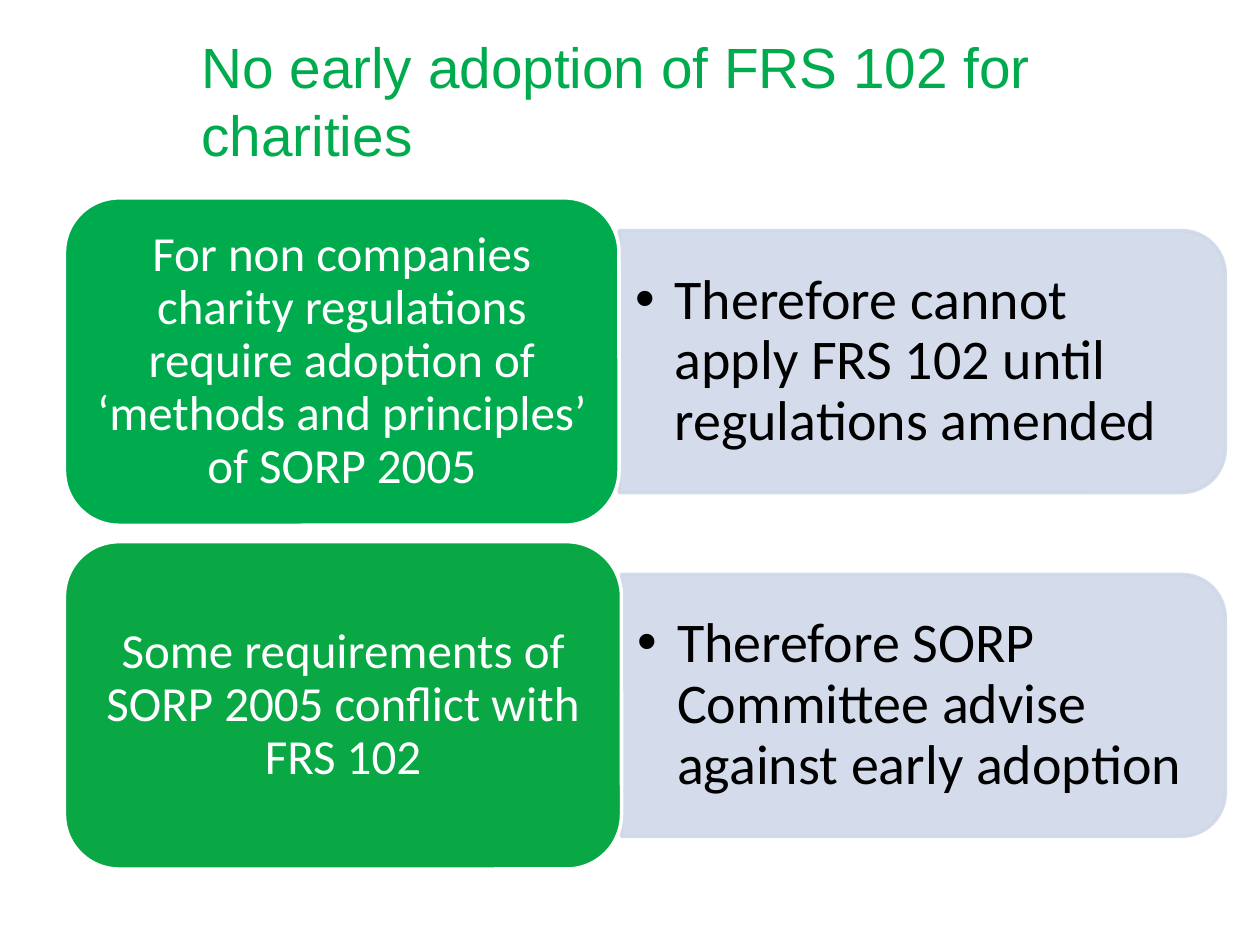
from lxml.etree import SubElement
from pptx import Presentation
from pptx.dml.color import RGBColor
from pptx.enum.shapes import MSO_SHAPE
from pptx.enum.text import MSO_ANCHOR, PP_ALIGN
from pptx.oxml.ns import qn
from pptx.util import Cm, Pt

GREEN = RGBColor(0x00, 0xAB, 0x4E)
DEEP_GREEN = RGBColor(0x0A, 0xA7, 0x45)
PALE_BLUE = RGBColor(0xD0, 0xD8, 0xE8)
WHITE = RGBColor(0xFF, 0xFF, 0xFF)
BLACK = RGBColor(0x00, 0x00, 0x00)

# Content: reason, consequence, card colour, card width in cm
TITLE = "No early adoption of FRS 102 for charities"
ROWS = [
    ("For non companies charity regulations require adoption of "
     "‘methods and principles’ of SORP 2005",
     "Therefore cannot apply FRS 102 until regulations amended", GREEN, 11.18),
    ("Some requirements of SORP 2005 conflict with FRS 102",
     "Therefore SORP Committee advise against early adoption", DEEP_GREEN, 11.23),
]

# Layout in cm
CARD_LEFT, CARD_TOP, CARD_HEIGHT, ROW_PITCH = 1.3, 3.99, 6.6, 6.93
CARD_PADDING = 0.33
PANEL_RIGHT, PANEL_HEIGHT = 24.7, 5.28
PANEL_PADDING = 0.25

# Text formats
TITLE_FONT = {"name": "Arial", "size": Pt(32.4)}
CARD_FONT = {"name": "Calibri", "size": Pt(28)}
PANEL_FONT = {"name": "Calibri", "size": Pt(32)}


def add_text(page, text, area, margins, font, color, spacing=1.0,
             align=PP_ALIGN.LEFT, bullet=False):
    box = page.shapes.add_textbox(*map(Cm, area))
    frame = box.text_frame
    side, edge = map(Cm, margins)
    settings = {"word_wrap": True, "vertical_anchor": MSO_ANCHOR.MIDDLE,
                "margin_left": side, "margin_right": side,
                "margin_top": edge, "margin_bottom": edge}
    for name, value in settings.items():
        setattr(frame, name, value)
    para = frame.paragraphs[0]
    para.alignment, para.line_spacing = align, spacing
    if bullet:
        props = para._p.get_or_add_pPr()
        props.set("marL", str(Cm(0.79)))
        props.set("indent", str(-Cm(0.79)))
        SubElement(props, qn("a:buFont"), typeface="Arial")
        SubElement(props, qn("a:buChar"), char="•")
    span = para.add_run()
    span.text = text
    for name, value in font.items():
        setattr(span.font, name, value)
    span.font.color.rgb = color


def add_block(page, kind, area, fill, line, opacity=None):
    shape = page.shapes.add_shape(kind, *map(Cm, area))
    shape.shadow.inherit = False
    shape.fill.solid()
    shape.fill.fore_color.rgb = fill
    shape.line.color.rgb = line
    shape.line.width = Pt(2)
    if opacity is not None:
        for color in shape._element.spPr.iter(qn("a:srgbClr")):
            SubElement(color, qn("a:alpha"), val=str(opacity * 1000))
    return shape


deck = Presentation()
deck.slide_width, deck.slide_height = Cm(25.4), Cm(19.05)
page = deck.slides.add_slide(deck.slide_layouts[6])

# Title
add_text(page, TITLE, (3.81, 0.43, 18.8, 3.18), (0.25, 0.13), TITLE_FONT, GREEN)

# Each row: a pale panel with the consequence, then a green card with the reason
for index, (reason, consequence, color, card_width) in enumerate(ROWS):
    top = CARD_TOP + index * ROW_PITCH
    middle = top + CARD_HEIGHT / 2
    panel_left = CARD_LEFT + card_width
    panel_width = PANEL_RIGHT - panel_left

    # The panel is an upright shape turned so its round corners face right
    center = panel_left + panel_width / 2
    panel = add_block(page, MSO_SHAPE.ROUND_2_SAME_RECTANGLE,
                      (center - PANEL_HEIGHT / 2, middle - panel_width / 2,
                       PANEL_HEIGHT, panel_width), PALE_BLUE, PALE_BLUE, 90)
    panel.rotation = 90
    add_text(page, consequence,
             (panel_left, middle - PANEL_HEIGHT / 2 + PANEL_PADDING,
              panel_width - PANEL_PADDING, PANEL_HEIGHT - 2 * PANEL_PADDING),
             (0.33, 0.17), PANEL_FONT, BLACK, 0.9, bullet=True)

    add_block(page, MSO_SHAPE.ROUNDED_RECTANGLE,
              (CARD_LEFT, top, card_width, CARD_HEIGHT), color, WHITE)
    add_text(page, reason,
             (CARD_LEFT + CARD_PADDING, top + CARD_PADDING,
              card_width - 2 * CARD_PADDING, CARD_HEIGHT - 2 * CARD_PADDING),
             (0.3, 0.15), CARD_FONT, WHITE, 0.9, PP_ALIGN.CENTER)

deck.save("out.pptx")
